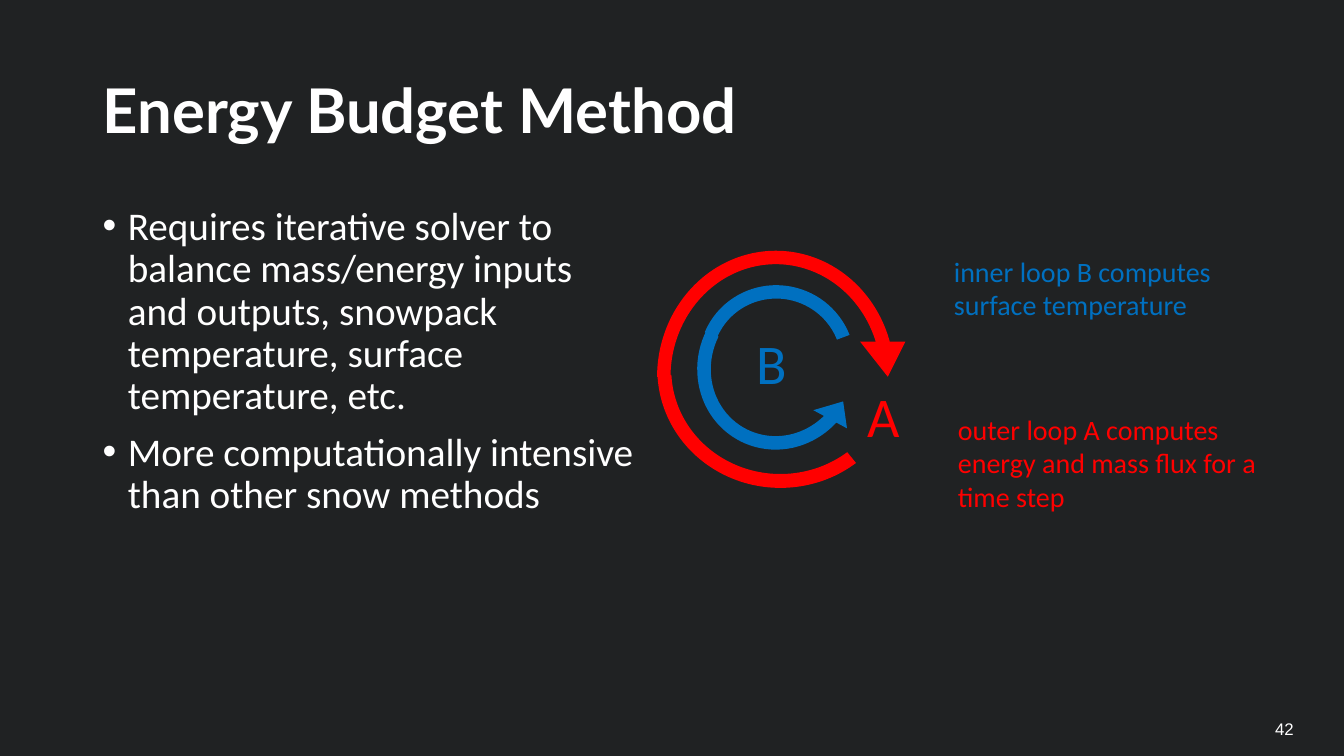
from dataclasses import dataclass

from lxml.etree import SubElement
from pptx import Presentation
from pptx.dml.color import RGBColor
from pptx.enum.shapes import MSO_SHAPE as Shape
from pptx.enum.text import MSO_ANCHOR as Anchor, PP_ALIGN as Align
from pptx.oxml.ns import qn
from pptx.util import Inches, Pt


@dataclass(frozen=True)
class Theme:
    background: str = "202223"
    text: str = "FFFFFF"
    inner: str = "0070C0"
    outer: str = "FF0000"
    title_font: str = "Lato"
    body_font: str = "Calibri"
    number_font: str = "Arial"
    title_size: int = 44
    loop_size: int = 40
    body_size: int = 28
    note_size: int = 20
    number_size: int = 12


THEME = Theme()
NOTE_INSETS = (0.14, 0.07)


def rgb(value):
    return RGBColor.from_string(value)


def add_bullet(paragraph):
    props = paragraph._p.get_or_add_pPr()
    props.set("marL", str(Inches(0.25)))
    props.set("indent", str(Inches(-0.25)))
    SubElement(props, qn("a:buFont"), typeface="Arial")
    SubElement(props, qn("a:buChar"), char="•")


def add_text(slide, box, *paragraphs, size, color=THEME.text, font=THEME.body_font,
             bold=False, align=Align.LEFT, anchor=Anchor.TOP, insets=(0.1, 0.05),
             line_spacing=None, space_before=None, bullets=False):
    frame = slide.shapes.add_textbox(*map(Inches, box)).text_frame
    frame.word_wrap = True
    frame.vertical_anchor = anchor
    frame.margin_left = frame.margin_right = Inches(insets[0])
    frame.margin_top = frame.margin_bottom = Inches(insets[1])
    for index, text in enumerate(paragraphs):
        paragraph = frame.add_paragraph() if index else frame.paragraphs[0]
        paragraph.alignment = align
        if line_spacing:
            paragraph.line_spacing = line_spacing
        if space_before:
            paragraph.space_before = Pt(space_before)
        if bullets:
            add_bullet(paragraph)
        run = paragraph.add_run()
        run.text = text
        run.font.size = Pt(size)
        run.font.name = font
        run.font.bold = bold
        run.font.color.rgb = rgb(color)


def add_arc(slide, kind, box, color, adjustments, rotation=0, mirrored=False):
    arc = slide.shapes.add_shape(kind, *map(Inches, box))
    for index, value in enumerate(adjustments):
        arc.adjustments[index] = value
    arc.rotation = rotation
    if mirrored:
        arc.element.spPr.xfrm.set("flipH", "1")
    arc.fill.solid()
    arc.fill.fore_color.rgb = rgb(color)
    arc.line.fill.background()
    arc.shadow.inherit = False


def add_loop_text(slide, color, letter, letter_box, note, note_box):
    add_text(slide, letter_box, letter, size=THEME.loop_size, color=color,
             insets=NOTE_INSETS)
    add_text(slide, note_box, note, size=THEME.note_size, color=color,
             insets=NOTE_INSETS)


def add_inner_loop(slide):
    add_arc(slide, Shape.CIRCULAR_ARROW, (6.8, 2.68, 1.84, 1.91), THEME.inner,
            (0.073, 10.319, 204.551, 108, 0.103), rotation=206.5, mirrored=True)
    add_arc(slide, Shape.BLOCK_ARC, (6.93, 2.83, 1.55, 1.53), THEME.inner,
            (131.757, 213.73, 0.087), rotation=18.9, mirrored=True)
    add_loop_text(slide, THEME.inner, "B", (7.36, 3.19, 0.44, 0.81),
                  "inner loop B computes surface temperature",
                  (9.32, 2.45, 3.02, 0.81))


def add_outer_loop(slide):
    add_arc(slide, Shape.CIRCULAR_ARROW, (6.36, 2.33, 2.67, 2.82), THEME.outer,
            (0.05, 10.89, 205.032, 108, 0.084))
    add_arc(slide, Shape.BLOCK_ARC, (6.52, 2.5, 2.44, 2.34), THEME.outer,
            (138.534, 214.442, 0.059), rotation=180)
    add_loop_text(slide, THEME.outer, "A", (8.46, 3.71, 0.44, 0.81),
                  "outer loop A computes energy and mass flux for a time step",
                  (9.36, 4.02, 3.31, 1.15))


def main():
    deck = Presentation()
    deck.slide_width, deck.slide_height = Inches(13.33), Inches(7.5)
    slide = deck.slides.add_slide(deck.slide_layouts[6])
    slide.background.fill.solid()
    slide.background.fill.fore_color.rgb = rgb(THEME.background)

    add_text(slide, (0.92, 0.4, 11.5, 1.45), "Energy Budget Method",
             size=THEME.title_size, font=THEME.title_font, bold=True,
             anchor=Anchor.MIDDLE, line_spacing=0.9)
    add_text(slide, (0.92, 2, 5.49, 4.76),
             "Requires iterative solver to balance mass/energy inputs and outputs, "
             "snowpack temperature, surface temperature, etc.",
             "More computationally intensive than other snow methods",
             size=THEME.body_size, line_spacing=0.9, space_before=10, bullets=True)
    add_inner_loop(slide)
    add_outer_loop(slide)
    add_text(slide, (12.3, 7.06, 0.88, 0.35), "42", size=THEME.number_size,
             font=THEME.number_font, align=Align.CENTER, anchor=Anchor.MIDDLE)
    deck.save("out.pptx")


if __name__ == "__main__":
    main()
